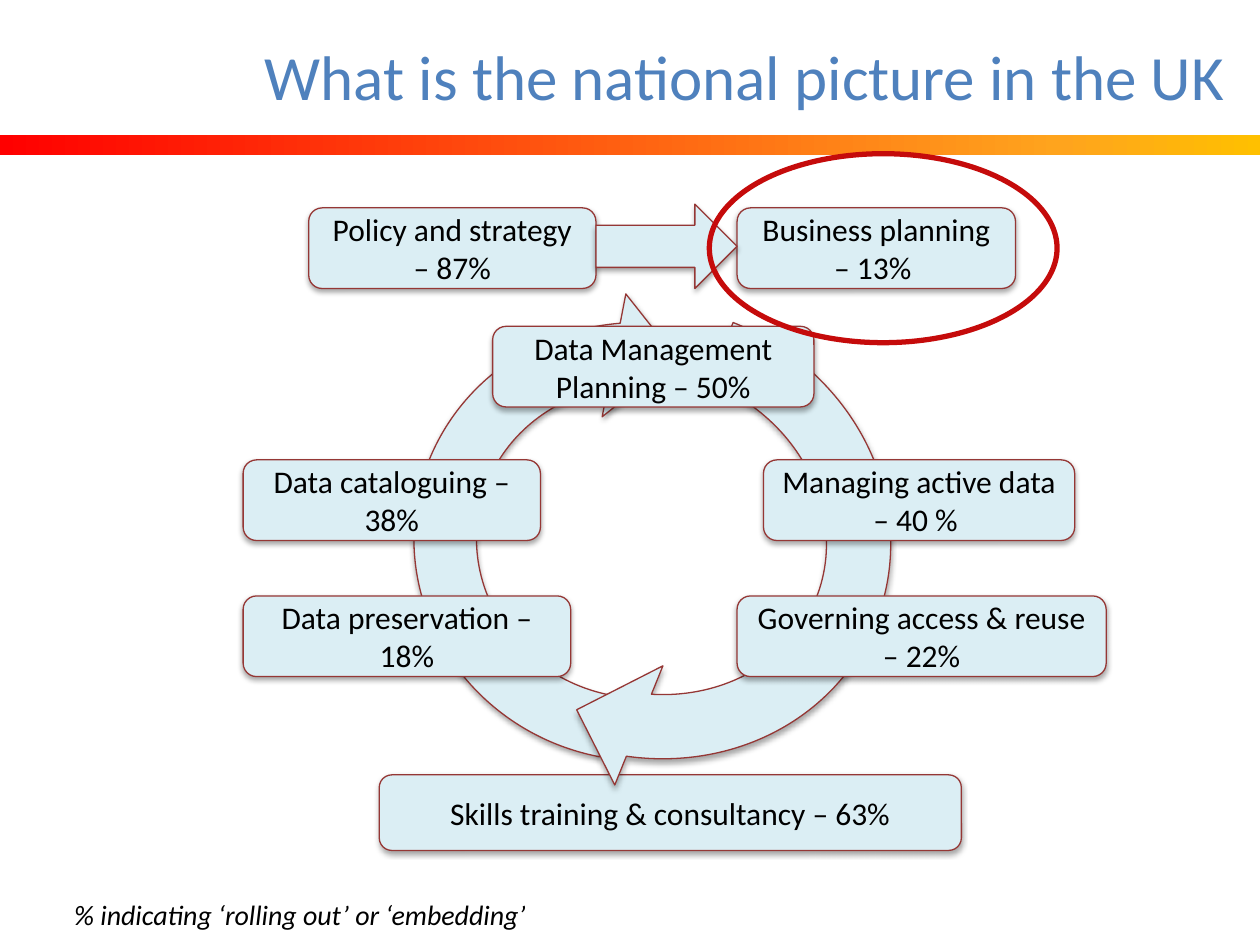
from copy import deepcopy

from lxml import etree
from pptx import Presentation
from pptx.dml.color import RGBColor
from pptx.enum.shapes import MSO_SHAPE as Shape
from pptx.enum.text import MSO_ANCHOR as Anchor, PP_ALIGN as Align
from pptx.oxml import parse_xml
from pptx.oxml.ns import qn
from pptx.util import Inches, Pt

RED = RGBColor(0xFF, 0x00, 0x00)
ORANGE = RGBColor(0xFF, 0xA4, 0x1D)
AMBER = RGBColor(0xFF, 0xC0, 0x00)
PALE_BLUE = RGBColor(0xDB, 0xEE, 0xF4)
MAROON = RGBColor(0x95, 0x37, 0x35)
TITLE_BLUE = RGBColor(0x4F, 0x81, 0xBD)
RING_RED = RGBColor(0xC5, 0x0B, 0x0B)
BLACK = RGBColor(0, 0, 0)

TITLE = "What is the national picture in the UK"
FOOTNOTE = "% indicating ‘rolling out’ or ‘embedding’"
BAND_STOPS = [(0, RED), (0.84, ORANGE), (1, AMBER)]

LEFT_COLUMN, RIGHT_COLUMN = 1.93, 5.85
STRATEGY_ROW, PLANNING_ROW, ACTIVE_ROW, ACCESS_ROW = 1.65, 2.59, 3.65, 4.73
STAGE_HEIGHT = 0.64
STRATEGY_LEFT, STRATEGY_WIDTH = 2.45, 2.28
STRATEGY_RIGHT = STRATEGY_LEFT + STRATEGY_WIDTH

SKILLS = ("Skills training & consultancy – 63%", (3.01, 6.15, 4.62, 0.6))
CYCLE_ARROWS = [
    ((3.1, 2.25, 3.97, 4.1), 280.9),
    ((3.11, 2.02, 4.08, 4.39), 112),
]
STAGES = [
    ("Policy and strategy – 87%", STRATEGY_LEFT, STRATEGY_ROW, STRATEGY_WIDTH),
    ("Business planning – 13% ", RIGHT_COLUMN, STRATEGY_ROW, 2.21),
    ("Data Management Planning – 50%", 3.91, PLANNING_ROW, 2.55),
    ("Managing active data – 40 % ", 6.06, ACTIVE_ROW, 2.47),
    ("Data cataloguing – 38%", LEFT_COLUMN, ACTIVE_ROW, 2.36),
    ("Governing access & reuse – 22%", RIGHT_COLUMN, ACCESS_ROW, 2.93),
    ("Data preservation – 18%", LEFT_COLUMN, ACCESS_ROW, 2.6),
]

SHADOW = """<a:effectLst xmlns:a="http://schemas.openxmlformats.org/drawingml/2006/main">
<a:outerShdw blurRad="40000" dist="23000" dir="5400000" rotWithShape="0">
<a:srgbClr val="000000"><a:alpha val="35000"/></a:srgbClr>
</a:outerShdw></a:effectLst>"""


def add_plain(slide, kind, box):
    shape = slide.shapes.add_shape(kind, *map(Inches, box))
    shape.shadow.inherit = False
    return shape


def write(frame, text, size, color, align, italic=None):
    paragraph = frame.paragraphs[0]
    paragraph.text = text
    paragraph.alignment = align
    font = paragraph.font
    font.name, font.size, font.italic = "Calibri", Pt(size), italic
    font.color.rgb = color


def add_part(slide, kind, box, text=None):
    part = add_plain(slide, kind, box)
    part.fill.solid()
    part.fill.fore_color.rgb = PALE_BLUE
    part.line.color.rgb = MAROON
    part.line.width = Pt(0.75)
    properties = part._element.spPr
    properties.replace(properties.find(qn("a:effectLst")), parse_xml(SHADOW))
    if text:
        part.text_frame.word_wrap = True
        part.text_frame.vertical_anchor = Anchor.MIDDLE
        write(part.text_frame, text, 18, BLACK, Align.CENTER)
    return part


def add_band(slide):
    band = add_plain(slide, Shape.RECTANGLE, (0, 1.07, 10.01, 0.16))
    band.line.fill.background()
    band.fill.gradient()
    band.fill.gradient_angle = 0
    stop_list = band._element.spPr.find(".//" + qn("a:gsLst"))
    stop_list.append(deepcopy(stop_list[-1]))
    for stop, (position, color) in zip(band.fill.gradient_stops, BAND_STOPS):
        stop.position = position
        stop.color.rgb = color


def add_cycle(slide):
    skills_text, skills_box = SKILLS
    add_part(slide, Shape.ROUNDED_RECTANGLE, skills_box, skills_text)
    for box, rotation in CYCLE_ARROWS:
        add_part(slide, Shape.CIRCULAR_ARROW, box).rotation = rotation
    for text, left, top, width in STAGES:
        add_part(slide, Shape.ROUNDED_RECTANGLE, (left, top, width, STAGE_HEIGHT), text)
    gap = RIGHT_COLUMN - STRATEGY_RIGHT
    add_part(slide, Shape.RIGHT_ARROW, (STRATEGY_RIGHT, 1.62, gap, 0.67))


def add_captions(slide):
    title = slide.shapes.add_textbox(*map(Inches, (0.82, -0.03, 9, 1.25))).text_frame
    title.word_wrap = True
    title.vertical_anchor = Anchor.MIDDLE
    write(title, TITLE, 36, TITLE_BLUE, Align.RIGHT)
    footnote = slide.shapes.add_textbox(*map(Inches, (0.49, 7.07, 4.01, 0.41))).text_frame
    footnote.word_wrap = False
    write(footnote, FOOTNOTE, 16, BLACK, Align.LEFT, italic=True)


def add_highlight(slide):
    ring = add_plain(slide, Shape.OVAL, (5.63, 1.22, 2.76, 1.5))
    ring.fill.background()
    ring.line.color.rgb = RING_RED
    ring.line.width = Pt(3)


def main():
    deck = Presentation()
    deck.slide_width, deck.slide_height = Inches(10), Inches(7.5)
    slide = deck.slides.add_slide(deck.slide_layouts[6])
    for add in (add_band, add_cycle, add_captions, add_highlight):
        add(slide)
    deck.save("out.pptx")


if __name__ == "__main__":
    main()
